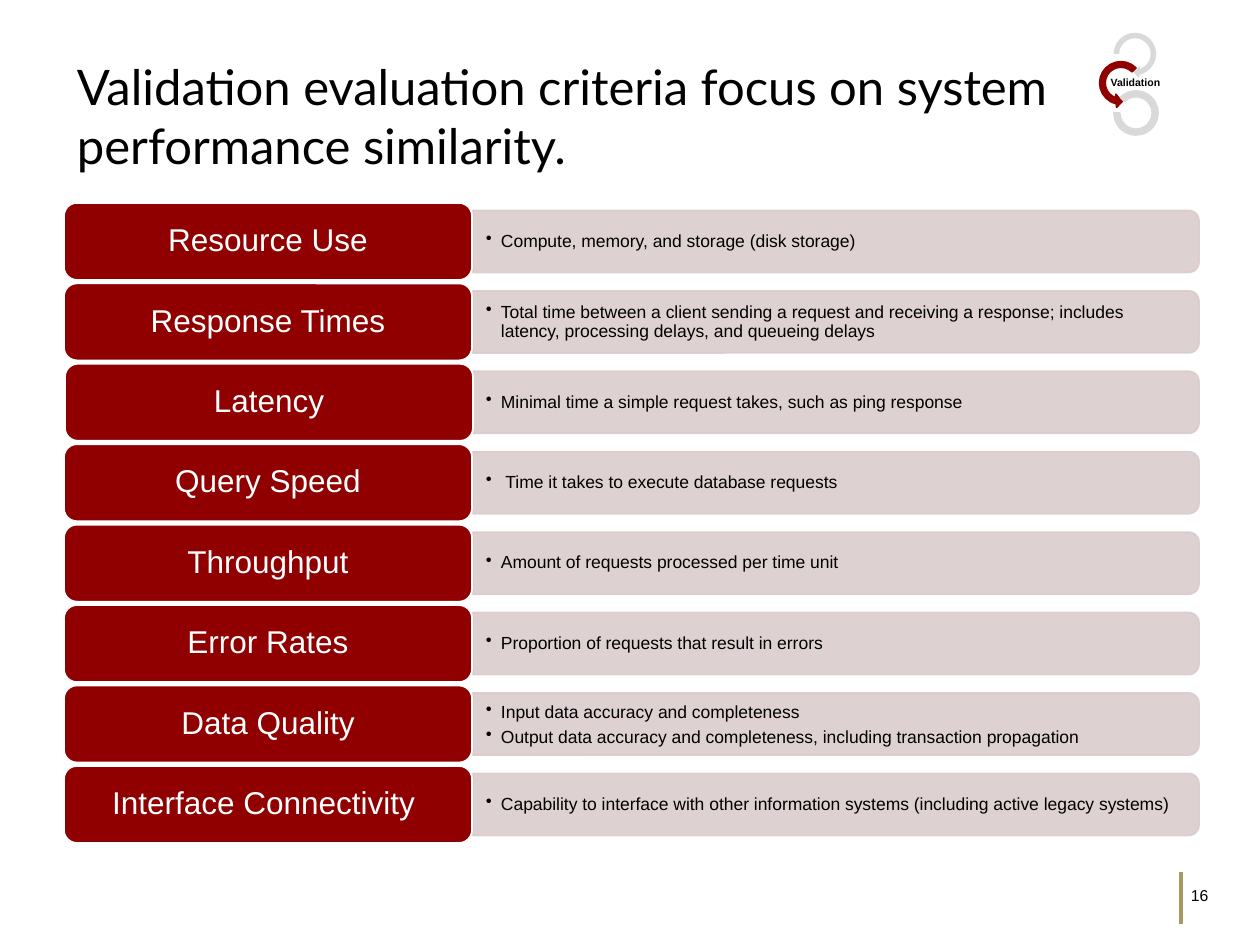
from lxml.etree import SubElement
from pptx import Presentation
from pptx.dml.color import RGBColor
from pptx.enum.shapes import MSO_CONNECTOR, MSO_SHAPE
from pptx.enum.text import MSO_ANCHOR, PP_ALIGN
from pptx.oxml.ns import qn
from pptx.util import Pt

TITLE = "Validation evaluation criteria focus on system performance similarity."
ROWS = [
    ("Resource Use", ["Compute, memory, and storage (disk storage)"]),
    ("Response Times", ["Total time between a client sending a request and receiving "
                        "a response; includes latency, processing delays, and "
                        "queueing delays"]),
    ("Latency", ["Minimal time a simple request takes, such as ping response"]),
    ("Query Speed", [" Time it takes to execute database requests"]),
    ("Throughput", ["Amount of requests processed per time unit"]),
    ("Error Rates", ["Proportion of requests that result in errors"]),
    ("Data Quality", ["Input data accuracy and completeness",
                      "Output data accuracy and completeness, including "
                      "transaction propagation"]),
    ("Interface Connectivity ", ["Capability to interface with other information "
                                 "systems (including active legacy systems)"]),
]
COLORS = {"red": "900001", "bar": "DBCCCC", "gray": "D9D9D9", "gold": "A59A60",
          "white": "FFFFFF", "black": "000000"}
# kind, box, adjustments, colour, outlined
RINGS = [
    (MSO_SHAPE.CIRCULAR_ARROW, (1110, 29, 50, 50),
     (0.11, 11.42, 45, 108, 0.13), "gray", False),
    (MSO_SHAPE.LEFT_CIRCULAR_ARROW, (1096, 58, 50, 50),
     (0.11, 11.42, 63, 189, 0.13), "red", True),
    (MSO_SHAPE.BLOCK_ARC, (1114, 91, 44, 44), (135, 108, 0.13), "gray", True),
]
TOP, STEP = 203, 563 / 7
LABEL_X, LABEL_W, LABEL_H = 64, 408, 77
BAR_X, BAR_W, BAR_H = 473, 726, 62
TEXT_W, TEXT_H = 723, 55
INDENT = 15


def px(n):
    return round(n * 914400 / 126)


def color(name):
    return RGBColor.from_string(COLORS[name])


def write(para, text, size, name="black", face="Arial", bold=False):
    run = para.add_run()
    run.text = text
    font = run.font
    font.size, font.name, font.bold = Pt(size), face, bold
    font.color.rgb = color(name)


def set_frame(frame, pad_x, pad_y):
    frame.word_wrap = True
    frame.vertical_anchor = MSO_ANCHOR.MIDDLE
    frame.margin_left = frame.margin_right = px(pad_x)
    frame.margin_top = frame.margin_bottom = px(pad_y)
    return frame


def add_box(slide, box, pad_x, pad_y):
    return set_frame(slide.shapes.add_textbox(*map(px, box)).text_frame, pad_x, pad_y)


def add_form(slide, kind, box, fill, line=None):
    form = slide.shapes.add_shape(kind, *map(px, box))
    form.shadow.inherit = False
    form.fill.solid()
    form.fill.fore_color.rgb = color(fill)
    if line:
        form.line.color.rgb = color(line)
        form.line.width = Pt(1)
    else:
        form.line.fill.background()
    return form


def add_bar(slide, mid):
    """Add a bar whose right corners are round, by turning a tall shape."""
    box = (BAR_X + (BAR_W - BAR_H) / 2, mid - BAR_W / 2, BAR_H, BAR_W)
    bar = add_form(slide, MSO_SHAPE.ROUND_2_SAME_RECTANGLE, box, "bar", "bar")
    bar.rotation = 90
    for tint in bar._element.spPr.iter(qn("a:srgbClr")):
        SubElement(tint, qn("a:alpha"), val="90000")


def add_list(slide, mid, items):
    box = (BAR_X, mid - TEXT_H / 2, TEXT_W, TEXT_H)
    frame = add_box(slide, box, 13, 18)
    for i, item in enumerate(items):
        para = frame.add_paragraph() if i else frame.paragraphs[0]
        para.level = 1
        props = para._p.get_or_add_pPr()
        props.set("marL", str(px(INDENT)))
        props.set("indent", str(-px(INDENT)))
        SubElement(props, qn("a:buChar"), char="•")
        para.line_spacing = 1.0 if len(items) > 1 else 0.9
        para.space_after = Pt(2)
        write(para, item, 10)


def add_label(slide, mid, text):
    nudge = 1 if text == "Latency" else 0
    box = (LABEL_X + nudge, mid - LABEL_H / 2, LABEL_W, LABEL_H)
    label = add_form(slide, MSO_SHAPE.ROUNDED_RECTANGLE, box, "red", "white")
    para = set_frame(label.text_frame, 9, 5).paragraphs[0]
    para.alignment = PP_ALIGN.CENTER
    para.line_spacing = 0.9
    write(para, text, 18, "white")


def add_rings(slide):
    for kind, box, values, tone, edged in RINGS:
        ring = add_form(slide, kind, box, tone, tone if edged else None)
        for i, value in enumerate(values):
            ring.adjustments[i] = value
    para = add_box(slide, (1097, 70, 77, 27), 0, 0).paragraphs[0]
    para.alignment = PP_ALIGN.CENTER
    para.line_spacing = 0.9
    write(para, "Validation", 6, bold=True)


def add_footer(slide):
    rule = slide.shapes.add_connector(
        MSO_CONNECTOR.STRAIGHT, px(1181), px(872), px(1181), px(924))
    rule.line.color.rgb = color("gold")
    rule.line.width = Pt(2)
    SubElement(rule._element.spPr, qn("a:effectLst"))
    write(add_box(slide, (1179, 878, 49, 34), 12, 6).paragraphs[0], "16", 9)


def add_title(slide):
    title = slide.shapes.title
    title.left, title.top, title.width, title.height = map(px, (64, 50, 1074, 131))
    para = set_frame(title.text_frame, 13, 6).paragraphs[0]
    para.alignment = PP_ALIGN.LEFT
    write(para, TITLE, 28, face="Lato")


def main():
    deck = Presentation()
    deck.slide_width, deck.slide_height = px(1260), px(945)
    slide = deck.slides.add_slide(deck.slide_layouts[5])
    add_title(slide)
    add_footer(slide)
    for i, (name, items) in enumerate(ROWS):
        mid = TOP + LABEL_H / 2 + i * STEP
        add_bar(slide, mid)
        add_list(slide, mid, items)
        add_label(slide, mid, name)
    add_rings(slide)
    deck.save("out.pptx")


if __name__ == "__main__":
    main()
